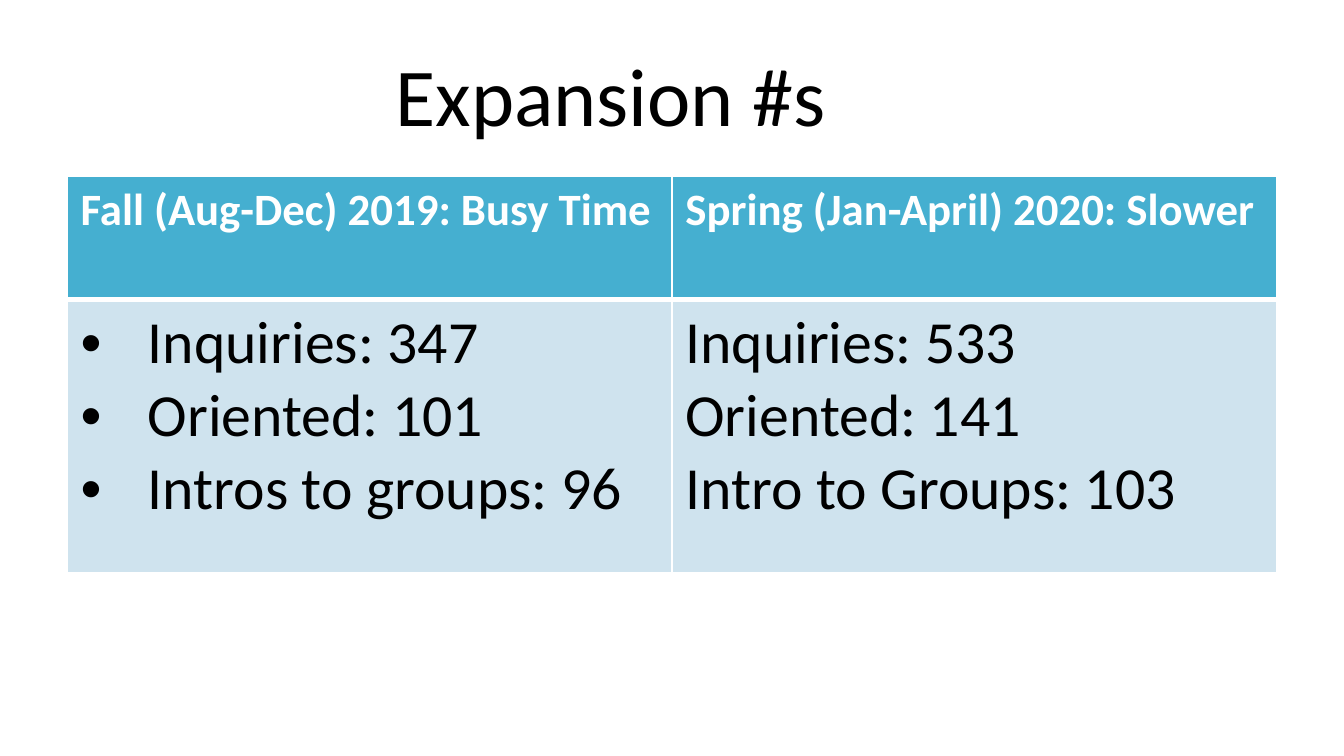
from dataclasses import dataclass

from lxml.etree import SubElement
from pptx import Presentation
from pptx.dml.color import RGBColor
from pptx.enum.text import MSO_ANCHOR as Anchor, PP_ALIGN as Align
from pptx.oxml.ns import qn
from pptx.util import Inches, Pt


@dataclass(frozen=True)
class Theme:
    font: str = "Calibri"
    text: str = "000000"
    light: str = "FFFFFF"
    header_fill: str = "45AFD0"
    body_fill: str = "CFE3EE"
    title_size: int = 44
    header_size: int = 24
    body_size: int = 32
    thin: int = 1
    thick: int = 3


@dataclass(frozen=True)
class Season:
    heading: str
    counts: tuple[str, ...]
    bulleted: bool = False


THEME = Theme()
SEASONS = (
    Season("Fall (Aug-Dec) 2019: Busy Time",
           ("Inquiries: 347", "Oriented: 101", "Intros to groups: 96"), bulleted=True),
    Season("Spring (Jan-April) 2020: Slower",
           ("Inquiries: 533", "Oriented: 141", "Intro to Groups: 103")),
)
SLIDE_WIDTH = 10
SLIDE_HEIGHT = SLIDE_WIDTH * 9 / 16
COLUMN_WIDTH = 4.5
ROW_HEIGHTS = (0.92, 2.03)


def add_bullet(paragraph, indent: float = 0.5) -> None:
    properties = paragraph._p.get_or_add_pPr()
    properties.set("marL", str(Inches(indent)))
    properties.set("indent", str(Inches(-indent)))
    SubElement(properties, qn("a:buFont"), typeface="Arial")
    SubElement(properties, qn("a:buChar"), char="•")


def write(frame, lines: tuple[str, ...], *, size: int, color: str = THEME.text,
          bold: bool = False, bulleted: bool = False, align: Align = Align.LEFT) -> None:
    for index, line in enumerate(lines):
        paragraph = frame.add_paragraph() if index else frame.paragraphs[0]
        paragraph.alignment = align
        if bulleted:
            add_bullet(paragraph)
        run = paragraph.add_run()
        run.text = line
        run.font.name = THEME.font
        run.font.size = Pt(size)
        run.font.bold = bold
        run.font.color.rgb = RGBColor.from_string(color)


def style_cell(cell, fill: str, top: int, bottom: int) -> None:
    """Draw the borders first, because the schema puts them before the fill."""
    properties = cell._tc.get_or_add_tcPr()
    widths = {"lnL": THEME.thin, "lnR": THEME.thin, "lnT": top, "lnB": bottom}
    for side, width in widths.items():
        border = SubElement(properties, qn(f"a:{side}"), w=str(Pt(width)))
        SubElement(SubElement(border, qn("a:solidFill")), qn("a:srgbClr"), val=THEME.light)
    cell.fill.solid()
    cell.fill.fore_color.rgb = RGBColor.from_string(fill)


def add_title(slide, text: str) -> None:
    title = slide.shapes.title
    title.left, title.top = Inches(0.5), Inches(0.23)
    title.width, title.height = Inches(8.09), Inches(0.94)
    title.text_frame.vertical_anchor = Anchor.MIDDLE
    write(title.text_frame, (text,), size=THEME.title_size, align=Align.CENTER)


def add_season_table(slide, seasons: tuple[Season, ...]) -> None:
    table = slide.shapes.add_table(
        len(ROW_HEIGHTS), len(seasons), Inches(0.5), Inches(1.31),
        Inches(COLUMN_WIDTH * len(seasons)), Inches(sum(ROW_HEIGHTS))).table
    for row, height in zip(table.rows, ROW_HEIGHTS):
        row.height = Inches(height)
    for column, season in enumerate(seasons):
        table.columns[column].width = Inches(COLUMN_WIDTH)
        header, body = table.cell(0, column), table.cell(1, column)
        style_cell(header, THEME.header_fill, THEME.thin, THEME.thick)
        style_cell(body, THEME.body_fill, THEME.thick, THEME.thin)
        write(header.text_frame, (season.heading,), size=THEME.header_size,
              color=THEME.light, bold=True)
        write(body.text_frame, season.counts, size=THEME.body_size,
              bulleted=season.bulleted)


def main() -> None:
    presentation = Presentation()
    presentation.slide_width = Inches(SLIDE_WIDTH)
    presentation.slide_height = Inches(SLIDE_HEIGHT)
    title_only = presentation.slide_layouts[5]
    slide = presentation.slides.add_slide(title_only)
    add_title(slide, "Expansion #s")
    add_season_table(slide, SEASONS)
    presentation.save("out.pptx")


if __name__ == "__main__":
    main()
